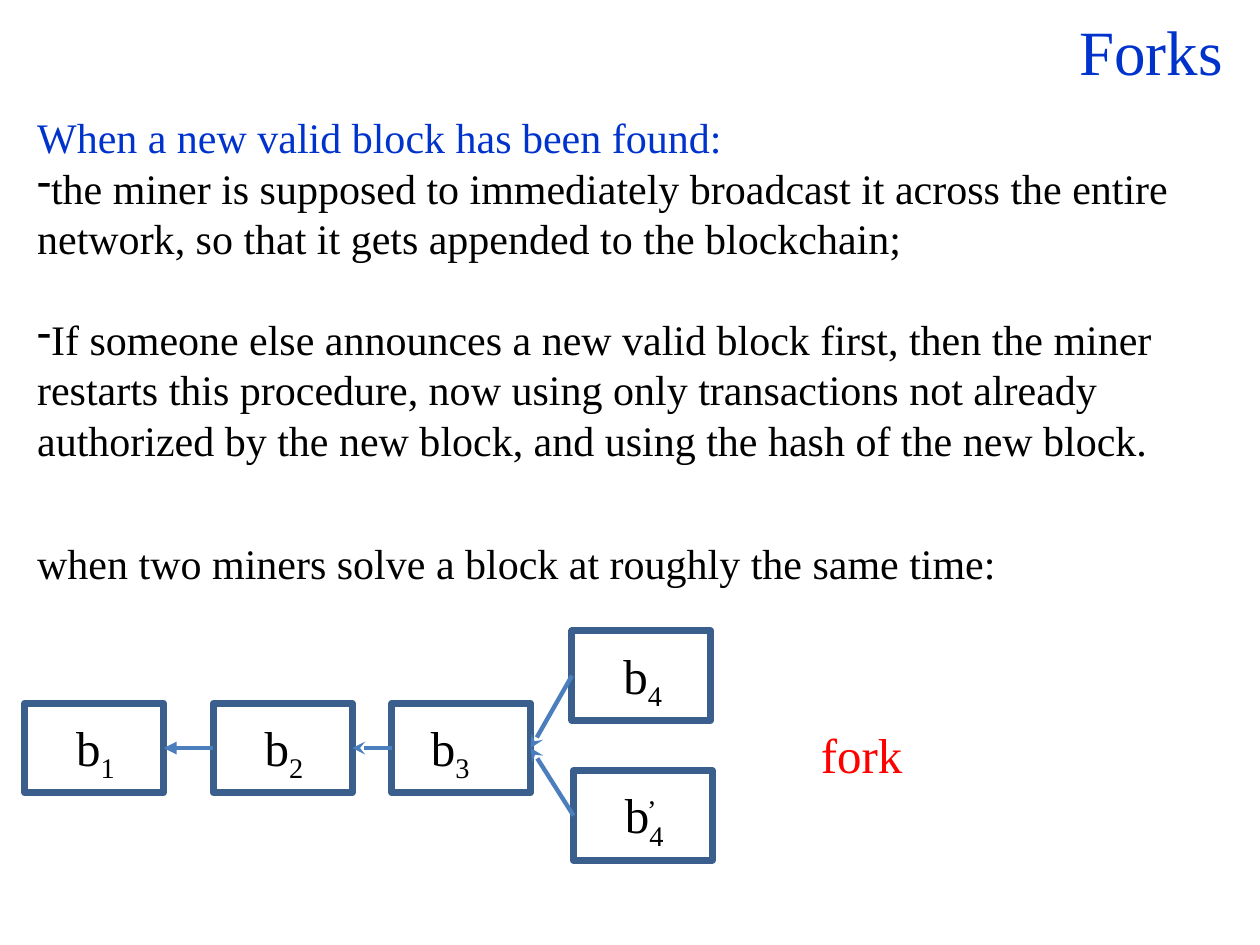
from lxml.etree import SubElement
from pptx import Presentation
from pptx.dml.color import RGBColor
from pptx.enum.shapes import MSO_CONNECTOR, MSO_SHAPE
from pptx.enum.text import MSO_ANCHOR, MSO_AUTO_SIZE, PP_ALIGN
from pptx.oxml.ns import qn
from pptx.util import Cm, Pt

BLUE, BLACK, RED = "0033CC", "000000", "FF0000"
BOX_LINE, ARROW_LINE = "3A5F8C", "4B7EBC"


def color(hex_string):
    return RGBColor.from_string(hex_string)


class SlideBuilder:
    font_name = "Times New Roman"
    box_width, box_height = 2.8, 1.8
    left_side, right_side = 1, 3  # connection sites of a rectangle

    def __init__(self, slide):
        self.slide = slide

    def format_run(self, run, size, hex_string):
        run.font.name = self.font_name
        run.font.size = Pt(size)
        run.font.color.rgb = color(hex_string)

    def title(self, text, left, top, width, height):
        title = self.slide.shapes.title
        title.left, title.top = Cm(left), Cm(top)
        title.width, title.height = Cm(width), Cm(height)
        frame = title.text_frame
        frame.text = text
        frame.auto_size = MSO_AUTO_SIZE.NONE
        frame.vertical_anchor = MSO_ANCHOR.TOP
        frame.paragraphs[0].alignment = PP_ALIGN.RIGHT
        self.format_run(frame.paragraphs[0].runs[0], 36, BLUE)

    def text(self, lines, left, top, width, height, size=24, hex_string=BLACK, wrap=True):
        shape = self.slide.shapes.add_textbox(Cm(left), Cm(top), Cm(width), Cm(height))
        frame = shape.text_frame
        frame.text = "\n".join(lines)
        frame.word_wrap = wrap
        frame.auto_size = MSO_AUTO_SIZE.SHAPE_TO_FIT_TEXT
        for paragraph in frame.paragraphs:
            for run in paragraph.runs:
                self.format_run(run, size, hex_string)
        return frame.paragraphs

    def dash(self, paragraph):
        properties = paragraph._p.get_or_add_pPr()
        properties.set("marL", "0")
        properties.set("indent", "0")
        SubElement(properties, qn("a:buChar")).set("char", "-")

    def label(self, base, subscript, left, top, width=1.85):
        paragraph = self.text([base], left, top, width, 1.45, size=28, wrap=False)[0]
        run = paragraph.add_run()
        run.text = subscript
        self.format_run(run, 28, BLACK)
        run.font._element.set("baseline", "-25000")

    def block(self, left, top):
        shape = self.slide.shapes.add_shape(
            MSO_SHAPE.RECTANGLE, Cm(left), Cm(top), Cm(self.box_width), Cm(self.box_height))
        shape.shadow.inherit = False
        shape.fill.background()
        shape.line.color.rgb = color(BOX_LINE)
        shape.line.width = Pt(4)
        return shape

    def arrow(self, newer, older, head="stealth"):
        connector = self.slide.shapes.add_connector(MSO_CONNECTOR.STRAIGHT, 0, 0, 0, 0)
        connector.begin_connect(newer, self.left_side)
        connector.end_connect(older, self.right_side)
        connector.line.color.rgb = color(ARROW_LINE)
        connector.line.width = Pt(2.5)
        SubElement(connector.line._get_or_add_ln(), qn("a:tailEnd")).set("type", head)
        SubElement(connector._element.spPr, qn("a:effectLst"))


def main():
    presentation = Presentation()
    presentation.slide_width, presentation.slide_height = Cm(25.4), Cm(19.05)
    builder = SlideBuilder(presentation.slides.add_slide(presentation.slide_layouts[5]))

    # Title and explanation
    builder.title("Forks", 0.3, 0.13, 24.6, 1.8)
    heading, broadcast, restart = builder.text([
        "When a new valid block has been found:",
        "the miner is supposed to immediately broadcast it across the entire network, "
        "so that it gets appended to the blockchain;",
        "If someone else announces a new valid block first, then the miner restarts "
        "this procedure, now using only transactions not already authorized by the "
        "new block, and using the hash of the new block.",
    ], 0.5, 2.13, 24.9, 7.44)
    heading.runs[0].font.color.rgb = color(BLUE)
    broadcast.space_after = Pt(28.8)
    for paragraph in (broadcast, restart):
        builder.dash(paragraph)
    builder.text(["when two miners solve a block at roughly the same time:"],
                 0.5, 10.72, 23.6, 1.27)

    # Blocks: left, top, subscript, shift of the label
    blocks = []
    for left, top, subscript, shift in [
        (0.5, 14.18, "1", 0),
        (4.3, 14.18, "2", 0),
        (7.9, 14.18, "3", -0.25),
        (11.53, 12.72, "4", 0),
        (11.56, 15.54, "4", 0),
    ]:
        blocks.append(builder.block(left, top))
        builder.label(" b", subscript, left + 0.54 + shift, top + 0.16)
    builder.label(" ", "’", 12.55, 15.19, width=1.2)

    # Each block points back to its predecessor
    first, second, third, fourth, rival = blocks
    builder.arrow(second, first, head="triangle")
    for newer, older in [(third, second), (fourth, third), (rival, third)]:
        builder.arrow(newer, older)

    # Name of the situation
    builder.text(["fork"], 16.3, 14.48, 5.8, 1.45, size=28, hex_string=RED)

    presentation.save("out.pptx")


if __name__ == "__main__":
    main()
